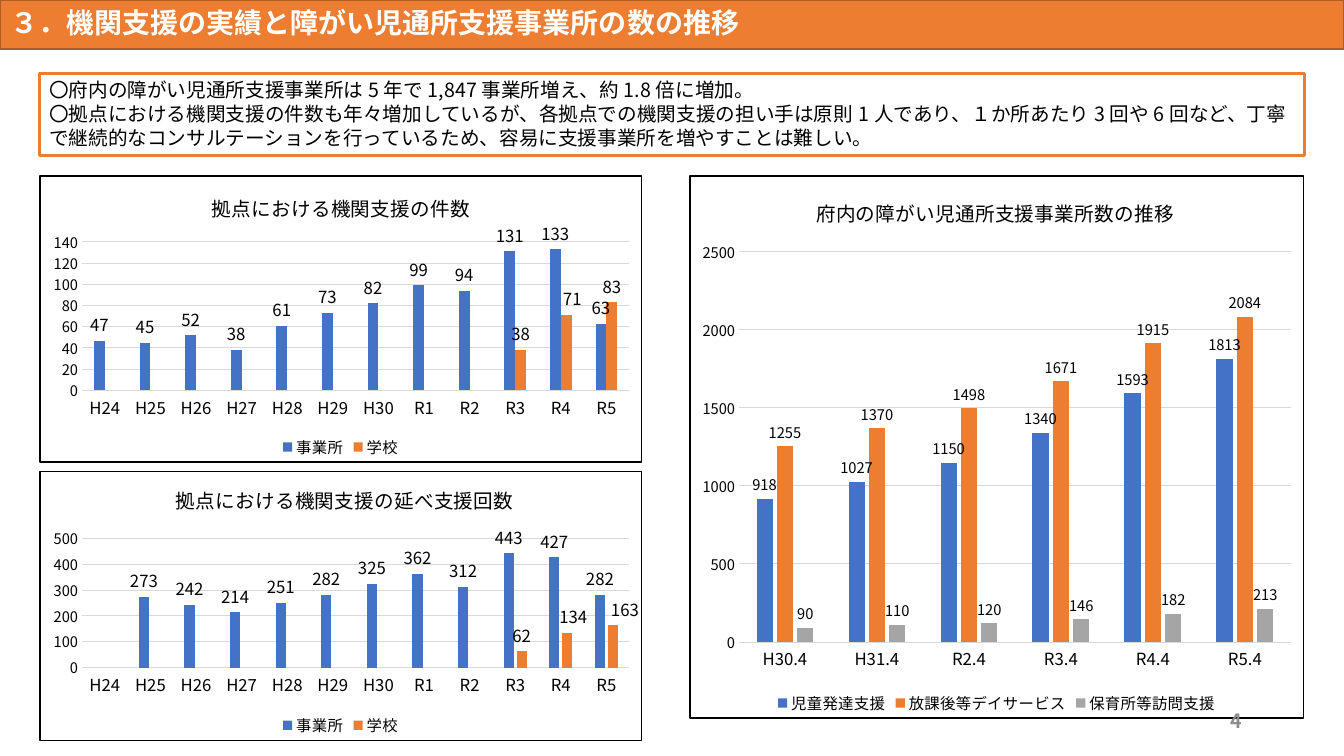
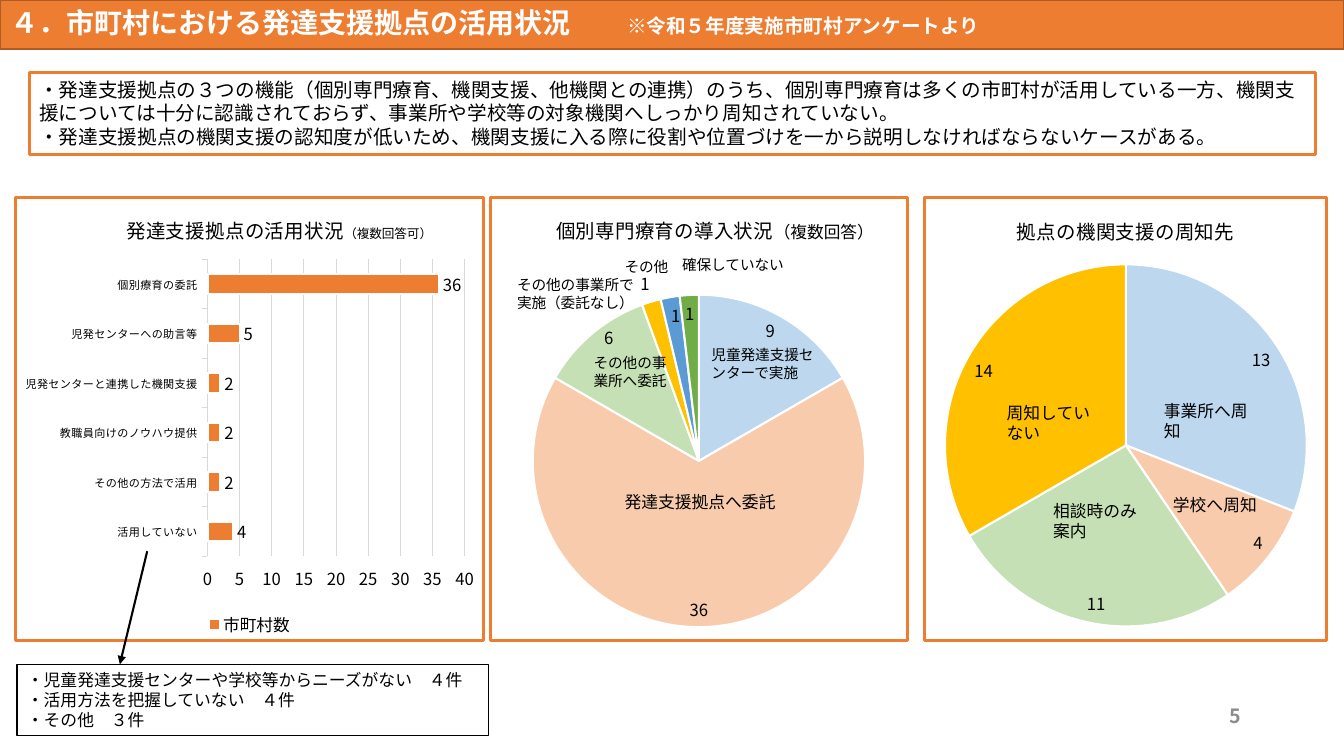
from lxml import etree
from pptx import Presentation
from pptx.chart.data import CategoryChartData
from pptx.dml.color import RGBColor
from pptx.enum import chart as ce, shapes, text
from pptx.oxml.ns import qn
from pptx.util import Cm, Pt

FONT = "Noto Sans CJK JP"
WHITE, BLACK = RGBColor(255, 255, 255), RGBColor(0, 0, 0)
ORANGE, BROWN = RGBColor(0xED, 0x7D, 0x31), RGBColor(0xAF, 0x5C, 0x24)
BLUE, GRAY = RGBColor(0x44, 0x72, 0xC4), RGBColor(0xA5, 0xA5, 0xA5)
GRID, NUMBER = RGBColor(0xD9, 0xD9, 0xD9), RGBColor(0x8C, 0x8C, 0x8C)
SERIES_COLORS = [BLUE, ORANGE, GRAY]
SLICE_COLORS = [RGBColor.from_string(c) for c in
                ("BDD7EE", "F8CBAD", "C5E0B4", "FFC000", "5B9BD5", "70AD47")]
SLIDE_W, SLIDE_H = 33.87, 19.05
POS = ce.XL_LABEL_POSITION

# Content: positions in cm, chart layouts and label shifts as fractions of the chart
YEARS = ["H24", "H25", "H26", "H27", "H28", "H29", "H30", "R1", "R2", "R3", "R4", "R5"]
BEFORE_R3 = [None] * 9
TREND = {
    "title": [("３．機関支援の実績と障がい児通所支援事業所の数の推移", 20)],
    "summary": ((0.99, 1.85, 31.88, 2.06), [
        "〇府内の障がい児通所支援事業所は5年で1,847事業所増え、約1.8倍に増加。",
        "〇拠点における機関支援の件数も年々増加しているが、各拠点での機関支援の担い手は原則1人であり、"
        "１か所あたり3回や6回など、丁寧で継続的なコンサルテーションを行っているため、"
        "容易に支援事業所を増やすことは難しい。"]),
    "number": ("4", (23.93, 17.65, 7.62, 1.02)),
    "columns": [
        dict(box=(0.99, 4.42, 15.19, 7.24), title=[("拠点における機関支援の件数", 14)],
             title_at=(0.28, 0.04), plot_at=(0.07, 0.23, 0.91, 0.52), cats=YEARS,
             series={"事業所": [47, 45, 52, 38, 61, 73, 82, 99, 94, 131, 133, 63],
                     "学校": BEFORE_R3 + [38, 71, 83]},
             top=140, step=20, overlap=0, label_size=12, shifts={10: (0.01, 0)}),
        dict(box=(0.99, 11.86, 15.19, 6.81), title=[("拠点における機関支援の延べ支援回数", 14)],
             title_at=(0.22, 0.03), plot_at=(0.07, 0.25, 0.91, 0.48), cats=YEARS,
             series={"事業所": [None, 273, 242, 214, 251, 282, 325, 362, 312, 443, 427, 282],
                     "学校": BEFORE_R3 + [62, 134, 163]},
             top=500, step=100, label_size=12, shifts={10: (0.01, 0), 11: (0.02, 0)}),
        dict(box=(17.37, 4.42, 15.49, 13.69), title=[("府内の障がい児通所支援事業所数の推移", 14)],
             title_at=(0.2, 0.03), plot_at=(0.08, 0.14, 0.9, 0.72),
             cats=["H30.4", "H31.4", "R2.4", "R3.4", "R4.4", "R5.4"],
             series={"児童発達支援": [918, 1027, 1150, 1340, 1593, 1813],
                     "放課後等デイサービス": [1255, 1370, 1498, 1671, 1915, 2084],
                     "保育所等訪問支援": [90, 110, 120, 146, 182, 213]},
             top=2500, step=500, label_size=10.5),
    ],
}
USAGE = {
    "title": [("４．市町村における発達支援拠点の活用状況", 20),
              ("\t※令和５年度実施市町村アンケートより", 14)],
    "summary": ((0.74, 1.83, 32.41, 2.06), [
        "・発達支援拠点の３つの機能（個別専門療育、機関支援、他機関との連携）のうち、"
        "個別専門療育は多くの市町村が活用している一方、機関支援については十分に認識されておらず、"
        "事業所や学校等の対象機関へしっかり周知されていない。",
        "・発達支援拠点の機関支援の認知度が低いため、機関支援に入る際に役割や位置づけを一から"
        "説明しなければならないケースがある。"]),
    "number": ("5", (23.9, 17.53, 7.62, 1.02)),
    "bars": dict(
        box=(0.36, 4.93, 11.86, 11.25),
        title=[("発達支援拠点の活用状況", 14), ("（複数回答可）", 9)],
        title_at=(0.23, 0.03), plot_at=(0.41, 0.14, 0.55, 0.67),
        cats=["活用していない", "その他の方法で活用", "教職員向けのノウハウ提供",
              "児発センターと連携した機関支援", "児発センターへの助言等", "個別療育の委託"],
        series={"市町村数": [4, 2, 2, 2, 5, 36]}, top=40, step=5, label_size=12),
    "pies": [
        dict(box=(12.32, 4.93, 10.59, 11.25),
             title=[("個別専門療育の導入状況", 14), ("（複数回答）", 12)],
             title_at=(0.15, 0.03), plot_at=(0.1, 0.22, 0.8, 0.75),
             vals=[9, 36, 6, 1, 1, 1], outside=[3],
             shifts={0: (-0.01, -0.01), 2: (0.02, -0.03)}),
        dict(box=(23.27, 4.93, 10.21, 11.25), title=[("拠点の機関支援の周知先", 14)],
             title_at=(0.22, 0.03), plot_at=(0.05, 0.15, 0.9, 0.82),
             vals=[13, 4, 11, 14], outside=[], shifts={}),
    ],
    "slice_names": [
        ("児童発達支援センターで実施", 10.5, (17.68, 8.59, 3.12, 1.19)),
        ("発達支援拠点へ委託", 12, (15.49, 12.27, 4.34, 0.76)),
        ("その他の事業所へ委託", 10.5, (14.71, 8.79, 2.39, 1.19)),
        ("その他の事業所で実施（委託なし）", 10.5, (12.78, 6.83, 3.61, 1.19)),
        ("その他", 10.5, (15.49, 6.38, 4.01, 0.74)),
        ("確保していない", 10.5, (16.94, 6.32, 4.01, 0.74)),
        ("事業所へ周知", 12, (29.08, 9.98, 2.79, 1.27)),
        ("学校へ周知", 12, (29.31, 12.34, 2.79, 0.76)),
        ("相談時のみ案内", 12, (26.29, 12.5, 2.79, 1.27)),
        ("周知していない", 12, (25.12, 10.03, 2.79, 1.27)),
    ],
    "reasons": ((0.43, 16.74, 11.89, 1.8), [
        "・児童発達支援センターや学校等からニーズがない　４件",
        "・活用方法を把握していない　４件",
        "・その他　３件"]),
    "arrow": (3.71, 13.89, 3.02, 16.74),
}


# Text and shape helpers
def cms(box):
    return [Cm(v) for v in box]


def style_font(font, size, color=BLACK, bold=False):
    font.name, font.size, font.bold = FONT, Pt(size), bold
    font.color.rgb = color


def write(p, content, size=14, color=BLACK, bold=False, align=text.PP_ALIGN.LEFT):
    runs = [(content, size)] if isinstance(content, str) else content
    p.alignment = align
    for words, run_size in runs:
        r = p.add_run()
        r.text = words
        style_font(r.font, run_size, color, bold)


def outline(sp, fill, line, width):
    sp.fill.solid()
    sp.fill.fore_color.rgb = fill
    sp.line.color.rgb = line
    sp.line.width = Pt(width)


def add_text(slide, box, content, anchor=text.MSO_ANCHOR.TOP, **fmt):
    tf = slide.shapes.add_textbox(*cms(box)).text_frame
    tf.word_wrap, tf.vertical_anchor = True, anchor
    write(tf.paragraphs[0], content, **fmt)


def add_box(slide, box, lines, line, width, size):
    sp = slide.shapes.add_shape(shapes.MSO_SHAPE.RECTANGLE, *cms(box))
    sp.shadow.inherit = False
    outline(sp, WHITE, line, width)
    tf = sp.text_frame
    tf.word_wrap, tf.vertical_anchor = True, text.MSO_ANCHOR.TOP
    for i, content in enumerate(lines):
        write(tf.add_paragraph() if i else tf.paragraphs[0], content, size=size)


def add_arrow(slide, ends):
    arrow = slide.shapes.add_connector(shapes.MSO_CONNECTOR.STRAIGHT, *cms(ends))
    arrow.line.color.rgb = BLACK
    arrow.line.width = Pt(1.5)
    etree.SubElement(arrow.line._get_or_add_ln(), qn("a:tailEnd"), type="triangle")
    etree.SubElement(arrow._element.spPr, qn("a:effectLst"))


def set_east_asian_font(root):
    for latin in list(root.iter(qn("a:latin"))):
        ea = etree.Element(qn("a:ea"), typeface=FONT)
        latin.addnext(ea)


# Chart helpers
def set_layout(parent, index, **values):
    for old in parent.findall(qn("c:layout")):
        parent.remove(old)
    layout = etree.Element(qn("c:layout"))
    manual = etree.SubElement(layout, qn("c:manualLayout"))
    for tag, value in values.items():
        etree.SubElement(manual, qn("c:" + tag), val=str(value))
    parent.insert(index, layout)


def frame_chart(chart, color, width):
    sp_pr = etree.Element(qn("c:spPr"))
    ln = etree.Element(qn("a:ln"), w=str(Pt(width)))
    for parent, rgb in ((sp_pr, WHITE), (ln, color)):
        fill = etree.SubElement(parent, qn("a:solidFill"))
        etree.SubElement(fill, qn("a:srgbClr"), val=str(rgb))
    sp_pr.append(ln)
    chart.element.find(qn("c:chart")).addnext(sp_pr)


def new_chart(slide, kind, d, cats, series, border, width):
    data = CategoryChartData()
    data.categories = cats
    for name, vals in series.items():
        data.add_series(name, vals)
    chart = slide.shapes.add_chart(kind, *cms(d["box"]), data).chart
    style_font(chart.font, 10)
    chart.has_title, chart.has_legend = True, False
    write(chart.chart_title.text_frame.paragraphs[0], d["title"], align=None)
    x, y = d["title_at"]
    set_layout(chart.element.xpath("c:chart/c:title")[0], 1,
               xMode="edge", yMode="edge", x=x, y=y)
    x, y, w, h = d["plot_at"]
    set_layout(chart.element.xpath("c:chart/c:plotArea")[0], 0, layoutTarget="inner",
               xMode="edge", yMode="edge", x=x, y=y, w=w, h=h)
    frame_chart(chart, border, width)
    return chart


def label_values(ser, size, position):
    labels = ser.data_labels
    labels.show_value, labels.position = True, position
    style_font(labels.font, size)


def label_point(ser, i, size, position, shift=None):
    label = ser.points[i].data_label
    style_font(label.font, size)
    label.position = position
    if shift:
        item = ser.data_labels._element.xpath(f"c:dLbl[c:idx/@val='{i}']")[0]
        set_layout(item, 1, x=shift[0], y=shift[1])


def add_bars(slide, d, kind, colors, border=BLACK, width=1, gap=219, cat_size=12,
             val_size=10.5, legend_size=11, tick=ce.XL_TICK_MARK.NONE, edge=None):
    chart = new_chart(slide, kind, d, d["cats"], d["series"], border, width)
    plot = chart.plots[0]
    plot.gap_width, plot.overlap = gap, d.get("overlap", -27)
    plot.vary_by_categories = False
    for ser, color in zip(plot.series, colors):
        ser.format.fill.solid()
        ser.format.fill.fore_color.rgb = color
        if edge:
            ser.format.line.color.rgb = edge
            ser.format.line.width = Pt(1.5)
        label_values(ser, d["label_size"], POS.OUTSIDE_END)
    for i, shift in d.get("shifts", {}).items():
        label_point(plot.series[1], i, d["label_size"], POS.OUTSIDE_END, shift)
    cat, val = chart.category_axis, chart.value_axis
    for axis, size in ((cat, cat_size), (val, val_size)):
        axis.major_tick_mark, axis.minor_tick_mark = tick, ce.XL_TICK_MARK.NONE
        style_font(axis.tick_labels.font, size)
    val.minimum_scale, val.maximum_scale, val.major_unit = 0, d["top"], d["step"]
    val.has_major_gridlines = True
    for line in (cat.format.line, val.major_gridlines.format.line):
        line.color.rgb = GRID
        line.width = Pt(0.75)
    val.format.line.fill.background()
    chart.has_legend = True
    chart.legend.position = ce.XL_LEGEND_POSITION.BOTTOM
    chart.legend.include_in_layout = False
    style_font(chart.legend.font, legend_size)
    set_east_asian_font(chart.element)


def add_pie(slide, d):
    cats = [str(i + 1) for i in range(len(d["vals"]))]
    chart = new_chart(slide, ce.XL_CHART_TYPE.PIE, d, cats, {"Series 1": d["vals"]}, ORANGE, 2.25)
    chart.plots[0].vary_by_categories = True
    ser = chart.plots[0].series[0]
    for i, color in enumerate(SLICE_COLORS[:len(cats)]):
        outline(ser.points[i].format, color, WHITE, 1.5)
    label_values(ser, 12, POS.INSIDE_END)
    for i in d["outside"]:
        label_point(ser, i, 12, POS.OUTSIDE_END)
    for i, shift in d["shifts"].items():
        label_point(ser, i, 12, POS.INSIDE_END, shift)
    set_east_asian_font(chart.element)


# Shared title band, summary box and page number
def start_slide(prs, d):
    slide = prs.slides.add_slide(prs.slide_layouts[5])
    title = slide.shapes.title
    title.left, title.top, title.width, title.height = cms((0, 0, SLIDE_W, 1.24))
    outline(title, ORANGE, BROWN, 1)
    tf = title.text_frame
    tf.auto_size, tf.word_wrap = text.MSO_AUTO_SIZE.NONE, True
    tf.vertical_anchor = text.MSO_ANCHOR.MIDDLE
    p = tf.paragraphs[0]
    p.line_spacing = 0.9
    write(p, d["title"], color=WHITE, bold=True)
    tabs = etree.SubElement(p._p.get_or_add_pPr(), qn("a:tabLst"))
    etree.SubElement(tabs, qn("a:tab"), pos=str(Cm(15.55)), algn="l")
    return slide


def finish_slide(slide, d):
    box, lines = d["summary"]
    add_box(slide, box, lines, ORANGE, 2.25, 14)
    number, box = d["number"]
    add_text(slide, box, number, anchor=text.MSO_ANCHOR.MIDDLE, color=NUMBER,
             bold=True, align=text.PP_ALIGN.RIGHT)
    set_east_asian_font(slide.element)


def main():
    prs = Presentation()
    prs.slide_width, prs.slide_height = Cm(SLIDE_W), Cm(SLIDE_H)

    # Trend of support and of offices
    slide = start_slide(prs, TREND)
    for d in TREND["columns"]:
        add_bars(slide, d, ce.XL_CHART_TYPE.COLUMN_CLUSTERED, SERIES_COLORS)
    finish_slide(slide, TREND)

    # Use of the support centres
    slide = start_slide(prs, USAGE)
    add_bars(slide, USAGE["bars"], ce.XL_CHART_TYPE.BAR_CLUSTERED, [ORANGE], border=ORANGE,
             width=2.25, gap=150, cat_size=8, val_size=12, legend_size=12,
             tick=ce.XL_TICK_MARK.OUTSIDE, edge=WHITE)
    box, lines = USAGE["reasons"]
    add_box(slide, box, lines, BLACK, 1, 12)
    add_arrow(slide, USAGE["arrow"])
    for d in USAGE["pies"]:
        add_pie(slide, d)
    for name, size, box in USAGE["slice_names"]:
        add_text(slide, box, name, size=size)
    finish_slide(slide, USAGE)
    prs.save("out.pptx")


if __name__ == "__main__":
    main()
